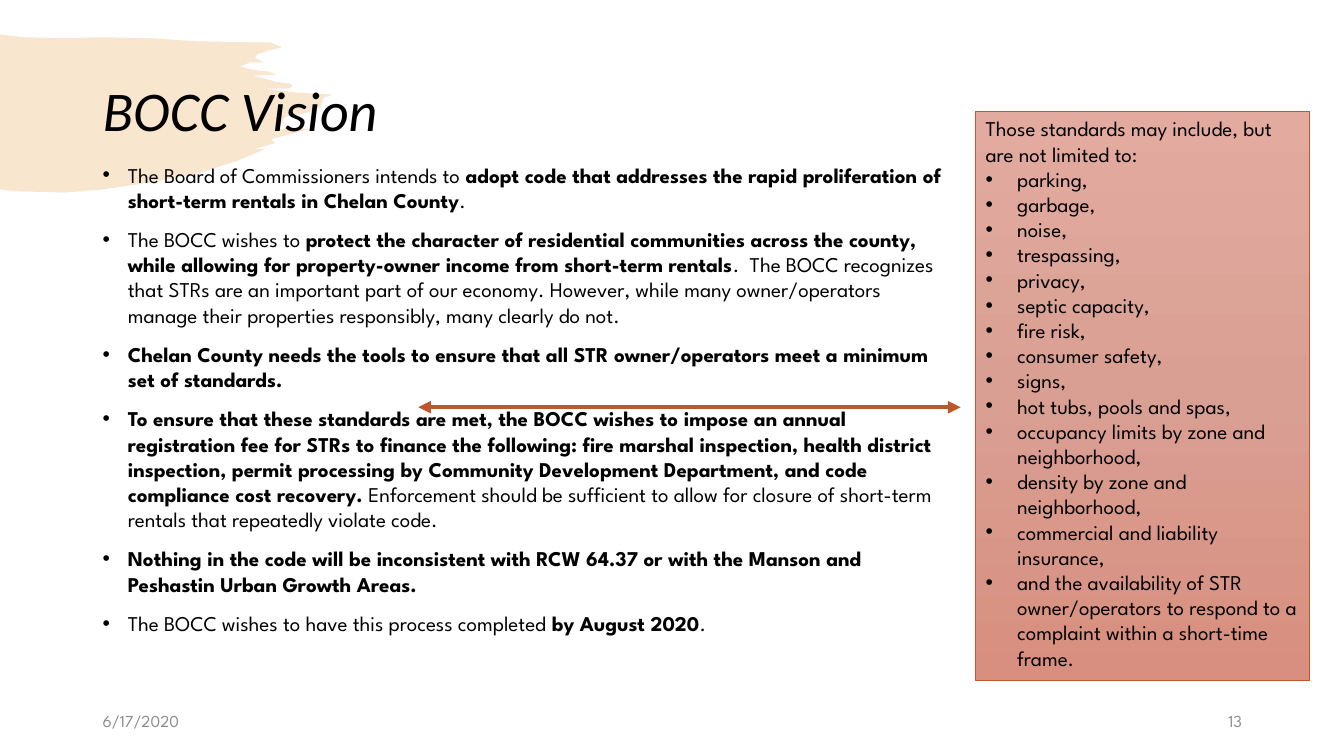
"""Build the BOCC Vision slide on short-term rental standards."""
from copy import deepcopy

from pptx import Presentation
from pptx.dml.color import RGBColor
from pptx.enum.shapes import MSO_CONNECTOR, MSO_SHAPE
from pptx.enum.text import MSO_ANCHOR, MSO_AUTO_SIZE, PP_ALIGN
from pptx.oxml.ns import qn
from pptx.util import Pt
from lxml.etree import SubElement

BLACK = RGBColor(0x00, 0x00, 0x00)
GREY = RGBColor(0x8C, 0x8C, 0x8C)
ORANGE = RGBColor(0xE4, 0x83, 0x12)
RUST = RGBColor(0xBD, 0x58, 0x2C)
PANEL_COLOURS = [RGBColor(0xE3, 0xAB, 0xA0), RGBColor(0xD9, 0x9F, 0x93), RGBColor(0xD8, 0x8F, 0x7F)]
BODY_FONT = "League Spartan"
TITLE_FONT = "Calibri"
MARGIN = 66.24
FOOTER_TOP = 500.4
BRUSH_UNIT = Pt(0.72)

BRUSH_OUTLINE = [
    (0, 34), (6, 35), (25, 37), (66, 38), (102, 37), (151, 38), (194, 41), (248, 42),
    (268, 42), (280, 47), (271, 49), (255, 54), (253, 57), (256, 59), (262, 62), (248, 62),
    (238, 66), (246, 68), (256, 70), (266, 71), (275, 74), (251, 75), (263, 78), (273, 81),
    (280, 82), (288, 83), (290, 85), (287, 88), (284, 88), (263, 88), (295, 92), (330, 94),
    (321, 97), (318, 106), (307, 111), (300, 113), (283, 116), (280, 120), (278, 125),
    (274, 128), (308, 128), (269, 138), (273, 142), (252, 148), (263, 148), (237, 159),
    (197, 172), (150, 181), (102, 188), (65, 191), (23, 190), (7, 189), (0, 188),
]

VISION = [
    [("The Board of Commissioners intends to ", False),
     ("adopt code that addresses the rapid proliferation of short-term rentals in Chelan County", True),
     (".", False)],
    [("The BOCC wishes to ", False),
     ("protect the character of residential communities across the county, while allowing for "
      "property-owner income from short-term rentals", True),
     (".  The BOCC recognizes that STRs are an important part of our economy. However, while many "
      "owner/operators manage their properties responsibly, many clearly do not.", False)],
    [("Chelan County needs the tools to ensure that all STR owner/operators meet a minimum set of "
      "standards.", True)],
    [("To ensure that these standards are met, the BOCC wishes to impose an annual registration fee "
      "for STRs to finance the following: fire marshal inspection, health district inspection, permit "
      "processing by Community Development Department, and code compliance cost recovery. ", True),
     ("Enforcement should be sufficient to allow for closure of short-term rentals that repeatedly "
      "violate code.", False)],
    [("Nothing in the code will be inconsistent with RCW 64.37 or with the Manson and Peshastin Urban "
      "Growth Areas.", True)],
    [("The BOCC wishes to have this process completed ", False), ("by August 2020", True), (".", False)],
]

STANDARDS_INTRO = "Those standards may include, but are not limited to:"
STANDARDS = [
    "parking,", "garbage,", "noise,", "trespassing,", "privacy,", "septic capacity,", "fire risk,",
    "consumer safety,", "signs,", "hot tubs, pools and spas,",
    "occupancy limits by zone and neighborhood,", "density by zone and neighborhood,",
    "commercial and liability insurance,",
    "and the availability of STR owner/operators to respond to a complaint within a short-time frame.",
]


def add_bullet(paragraph, indent):
    """Give a paragraph a hanging round bullet."""
    properties = paragraph._p.get_or_add_pPr()
    properties.set("marL", str(Pt(indent)))
    properties.set("indent", str(-Pt(indent)))
    SubElement(properties, qn("a:buFont")).set("typeface", "Arial")
    SubElement(properties, qn("a:buChar")).set("char", "•")


def write_paragraph(paragraph, text, size=15, font=BODY_FONT, colour=BLACK, italic=False,
                    align=PP_ALIGN.LEFT, before=0, spacing=1.0, indent=0):
    """Write a string, or (text, bold) pairs, into a paragraph with its format."""
    paragraph.alignment = align
    paragraph.space_before = Pt(before)
    paragraph.line_spacing = spacing
    if indent:
        add_bullet(paragraph, indent)
    for words, bold in [(text, False)] if isinstance(text, str) else text:
        run = paragraph.add_run()
        run.text = words
        run.font.name = font
        run.font.size = Pt(size)
        run.font.bold = bold
        run.font.italic = italic
        run.font.color.rgb = colour


def add_text_box(slide, left, top, width, height, texts, anchor=MSO_ANCHOR.TOP, **text_format):
    """Add a wrapping text box with one paragraph for each text."""
    frame = slide.shapes.add_textbox(Pt(left), Pt(top), Pt(width), Pt(height)).text_frame
    frame.word_wrap = True
    frame.vertical_anchor = anchor
    for index, text in enumerate(texts):
        paragraph = frame.add_paragraph() if index else frame.paragraphs[0]
        write_paragraph(paragraph, text, **text_format)


def add_brush_stroke(slide):
    """Draw the pale brush stroke behind the title."""
    builder = slide.shapes.build_freeform(*BRUSH_OUTLINE[0], scale=BRUSH_UNIT)
    builder.add_line_segments(BRUSH_OUTLINE[1:], close=True)
    shape = builder.convert_to_shape()
    shape.shadow.inherit = False
    shape.line.fill.background()
    shape.fill.solid()
    shape.fill.fore_color.rgb = ORANGE
    colour = shape._element.spPr.find(qn("a:solidFill"))[0]
    SubElement(colour, qn("a:alpha")).set("val", "20000")
    slide.shapes._spTree.insert(2, shape._element)


def set_title(slide, text):
    """Place and format the title placeholder."""
    title = slide.shapes.title
    title.left, title.top, title.width, title.height = Pt(MARGIN), Pt(28.8), Pt(828), Pt(104.4)
    title.text_frame.auto_size = MSO_AUTO_SIZE.NONE
    title.text_frame.vertical_anchor = MSO_ANCHOR.MIDDLE
    write_paragraph(title.text_frame.paragraphs[0], text, size=40, font=TITLE_FONT, italic=True, spacing=0.9)


def fill_gradient(shape, colours):
    """Fill a shape from top to bottom with three evenly spaced colours."""
    shape.fill.gradient()
    shape.fill.gradient_angle = 270
    stop_list = shape._element.spPr.find(qn("a:gradFill")).find(qn("a:gsLst"))
    middle = deepcopy(stop_list[0])
    middle.set("pos", "50000")
    stop_list.insert(1, middle)
    for stop, colour in zip(shape.fill.gradient_stops, colours):
        stop.color.rgb = colour


def add_standards_panel(slide):
    """Add the shaded panel that lists the standards."""
    panel = slide.shapes.add_shape(MSO_SHAPE.RECTANGLE, Pt(696.96), Pt(79.2), Pt(238.32), Pt(406.8))
    panel.shadow.inherit = False
    fill_gradient(panel, PANEL_COLOURS)
    panel.line.color.rgb = RUST
    panel.line.width = Pt(0.5)
    frame = panel.text_frame
    frame.word_wrap = True
    frame.auto_size = MSO_AUTO_SIZE.SHAPE_TO_FIT_TEXT
    frame.vertical_anchor = MSO_ANCHOR.TOP
    write_paragraph(frame.paragraphs[0], STANDARDS_INTRO)
    for standard in STANDARDS:
        write_paragraph(frame.add_paragraph(), standard, indent=22.5)


def add_double_arrow(slide, left, right, height):
    """Add a level line with an arrowhead at both ends."""
    arrow = slide.shapes.add_connector(MSO_CONNECTOR.STRAIGHT, Pt(left), Pt(height), Pt(right), Pt(height))
    arrow.line.color.rgb = RUST
    arrow.line.width = Pt(3)
    line = arrow.line._get_or_add_ln()
    for end in ("a:headEnd", "a:tailEnd"):
        SubElement(line, qn(end)).set("type", "triangle")
    SubElement(arrow._element.spPr, qn("a:effectLst"))


def main():
    """Build and save the slide."""
    presentation = Presentation()
    presentation.slide_width, presentation.slide_height = Pt(960), Pt(540)
    slide = presentation.slides.add_slide(presentation.slide_layouts[5])
    add_brush_stroke(slide)
    set_title(slide, "BOCC Vision")
    add_text_box(slide, MARGIN, 112.32, 619.92, 373.68, VISION, before=10, indent=18)
    footer = {"anchor": MSO_ANCHOR.MIDDLE, "size": 12, "colour": GREY}
    add_text_box(slide, MARGIN, FOOTER_TOP, 216, 28.8, ["6/17/2020"], **footer)
    add_text_box(slide, 678.24, FOOTER_TOP, 216, 28.8, ["13"], align=PP_ALIGN.RIGHT, **footer)
    add_standards_panel(slide)
    add_double_arrow(slide, 298.8, 686.16, 290.88)
    presentation.save("out.pptx")


if __name__ == "__main__":
    main()
